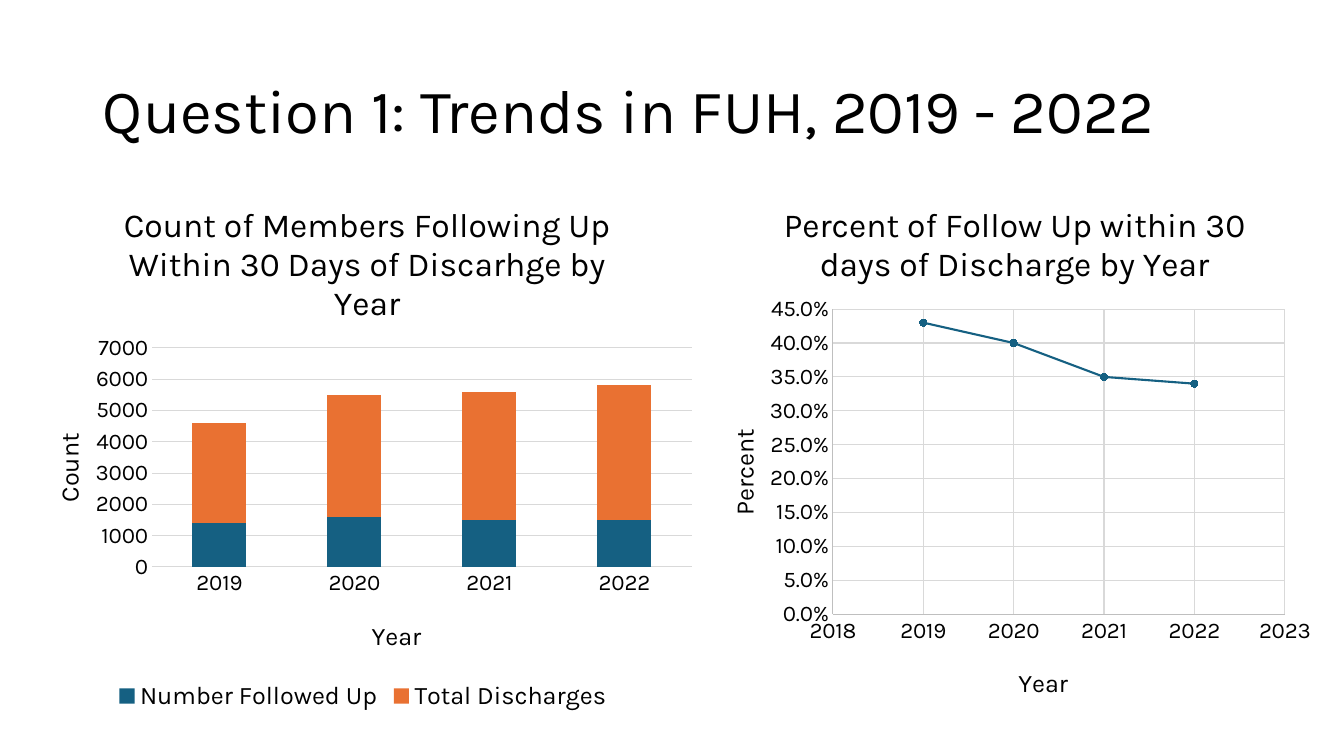
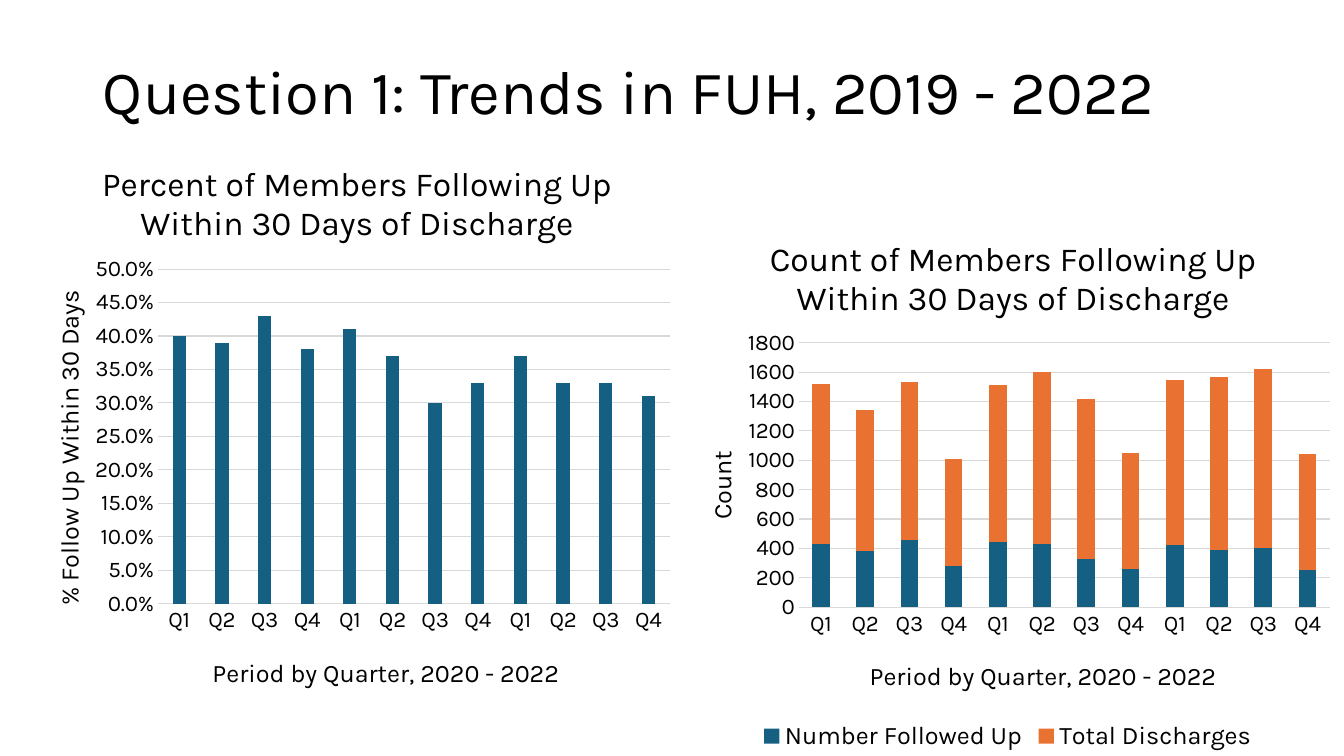
from lxml.etree import SubElement
from pptx import Presentation
from pptx.chart.data import CategoryChartData as CatData, XyChartData as XyData
from pptx.dml.color import RGBColor
from pptx.enum.chart import XL_CHART_TYPE as Kind, XL_LEGEND_POSITION as Spot
from pptx.enum.chart import XL_MARKER_STYLE as Mark, XL_TICK_MARK as Tick
from pptx.enum.text import MSO_ANCHOR as Anchor, PP_ALIGN as Align
from pptx.oxml.ns import qn
from pptx.util import Cm, Pt

rgb = RGBColor.from_string
BLACK, GRID, EDGE = "000000", "D9D9D9", "BFBFBF"
HUES = ["156082", "E97132"]
HEAD = "Question 1: Trends in FUH, 2019 - 2022"
NAMES = ["Number Followed Up", "Total Discharges"]
YEARS = ["2019", "2020", "2021", "2022"]
TERMS = ["Q1", "Q2", "Q3", "Q4"] * 3
SPAN = "Period by Quarter, 2020 - 2022"
FACE = {"name": "Karla", "bold": False}
TICKS = {"major_tick_mark": Tick.NONE, "minor_tick_mark": Tick.NONE}


def ink(font, size):
    for key, val in {**FACE, "size": Pt(size)}.items():
        setattr(font, key, val)
    font.color.rgb = rgb(BLACK)


def place(node, box, spot):
    old = node.find(qn("c:layout"))
    if old is not None:
        node.remove(old)
    lay = SubElement(node, qn("c:layout"))
    node.insert(0 if node.find(qn("c:tx")) is None else 1, lay)
    man = SubElement(lay, qn("c:manualLayout"))
    if len(spot) == 4:
        SubElement(man, qn("c:layoutTarget")).set("val", "inner")
    for key in "xy":
        SubElement(man, qn(f"c:{key}Mode")).set("val", "edge")
    left, top, wide, high = box
    parts = [(spot[0] - left) / wide, (spot[1] - top) / high]
    if len(spot) == 4:
        parts += [spot[2] / wide, spot[3] / high]
    for key, part in zip("xywh", parts):
        SubElement(man, qn(f"c:{key}")).set("val", f"{part:.4f}")


SLIDES = [
    (1.02, [
        {"kind": Kind.COLUMN_STACKED, "box": (0.51, 4.32, 17.27, 13.72),
         "plot": (3.83, 8.77, 13.61, 5.52),
         "title": ("Count of Members Following Up Within 30 Days of Discarhge by Year", 2.97),
         "x": ("Year", 9.25, 15.5), "y": ("Count", 1.21, 10.8),
         "cats": YEARS, "names": NAMES, "gap": 150, "lap": 100,
         "vals": [[1400, 1600, 1500, 1500], [3200, 3900, 4100, 4300]],
         "top": 7000, "step": 1000, "form": "General"},
        {"kind": Kind.XY_SCATTER_LINES, "box": (17.53, 4.32, 15.85, 13.72),
         "plot": (20.99, 7.79, 11.39, 7.69),
         "title": ("Percent of Follow Up within 30 days of Discharge by Year", 19.6),
         "x": ("Year", 25.55, 16.68), "y": ("Percent", 18.22, 10.7),
         "cats": YEARS, "names": ["Series 1"],
         "vals": [[0.43, 0.4, 0.35, 0.34]],
         "top": 0.45, "step": 0.05, "form": "0.0%"},
    ]),
    (0.53, [
        {"kind": Kind.COLUMN_CLUSTERED, "box": (0.48, 3.28, 16.74, 14.53),
         "plot": (3.98, 6.78, 12.9, 8.44),
         "title": ("Percent of Members Following Up Within 30 Days of Discharge", 2.42),
         "x": (SPAN, 5.24, 16.43), "y": ("% Follow Up Within 30 Days", 1.21, 7.2),
         "cats": TERMS, "names": ["Series 1"], "gap": 219, "lap": -27,
         "vals": [[0.4, 0.39, 0.43, 0.38, 0.41, 0.37, 0.3, 0.33, 0.37, 0.33, 0.33, 0.31]],
         "top": 0.5, "step": 0.05, "form": "0.0%"},
        {"kind": Kind.COLUMN_STACKED, "box": (16.93, 5.18, 16.93, 13.87),
         "plot": (20.13, 8.64, 13.38, 6.66),
         "title": ("Count of Members Following Up Within 30 Days of Discharge", 19.25),
         "x": (SPAN, 21.8, 16.5), "y": ("Count", 17.66, 11.24),
         "cats": TERMS, "names": NAMES, "gap": 150, "lap": 100,
         "vals": [[430, 380, 460, 280, 440, 430, 330, 260, 420, 390, 400, 250],
                  [1090, 960, 1070, 730, 1070, 1170, 1090, 790, 1130, 1180, 1220, 790]],
         "top": 1800, "step": 200, "form": "General"},
    ]),
]

deck = Presentation()
deck.slide_width, deck.slide_height = Cm(33.87), Cm(19.05)

for high, charts in SLIDES:
    slide = deck.slides.add_slide(deck.slide_layouts[5])
    head = slide.shapes.title
    spots = {"left": 2.34, "top": high, "width": 29.21, "height": 3.68}
    for key, val in spots.items():
        setattr(head, key, Cm(val))
    head.text_frame.text = HEAD
    head.text_frame.vertical_anchor = Anchor.MIDDLE
    para = head.text_frame.paragraphs[0]
    for key, val in {"alignment": Align.LEFT, "line_spacing": 0.9}.items():
        setattr(para, key, val)
    ink(para.runs[0].font, 44)

    for item in charts:
        xy = item["kind"] == Kind.XY_SCATTER_LINES
        box = item["box"]
        data = XyData() if xy else CatData()
        if not xy:
            data.categories = item["cats"]
        for name, vals in zip(item["names"], item["vals"]):
            if xy:
                row = data.add_series(name)
                for year, val in zip(item["cats"], vals):
                    row.add_data_point(int(year), val)
            else:
                data.add_series(name, vals)
        frame = slide.shapes.add_chart(item["kind"], *map(Cm, box), data)
        chart = frame.chart
        ink(chart.font, 10)
        plot = chart.plots[0]
        plot.vary_by_categories = False
        if not xy:
            plot.gap_width, plot.overlap = item["gap"], item["lap"]

        for line, hue in zip(plot.series, HUES):
            if xy:
                line.format.line.color.rgb = rgb(hue)
                line.format.line.width = Pt(1.5)
                mark = line.marker
                mark.style, mark.size = Mark.CIRCLE, 5
                fills = [mark.format.fill]
                mark.format.line.color.rgb = rgb(hue)
            else:
                fills = [line.format.fill]
            for fill in fills:
                fill.solid()
                fill.fore_color.rgb = rgb(hue)

        across, up = chart.category_axis, chart.value_axis
        grids = {"x": xy, "y": True}
        edges = {"x": EDGE if xy else GRID, "y": EDGE if xy else None}
        scale = {"minimum_scale": 0, "maximum_scale": item["top"],
                 "major_unit": item["step"]}
        for key, val in scale.items():
            setattr(up, key, val)
        if xy:
            years = {"minimum_scale": 2018, "maximum_scale": 2023, "major_unit": 1}
            for key, val in years.items():
                setattr(across, key, val)
        forms = {"x": "General", "y": item["form"]}

        for side, axis in {"x": across, "y": up}.items():
            looks = {**TICKS, "has_major_gridlines": grids[side], "has_title": True}
            for key, val in looks.items():
                setattr(axis, key, val)
            ink(axis.tick_labels.font, 16)
            axis.tick_labels.number_format = forms[side]
            axis.tick_labels.number_format_is_linked = False
            rules = [(axis.format.line, edges[side])]
            if grids[side]:
                rules.append((axis.major_gridlines.format.line, GRID))
            for rule, hue in rules:
                if hue:
                    rule.color.rgb = rgb(hue)
                    rule.width = Pt(0.75)
                else:
                    rule.fill.background()

        chart.has_title = True
        text, left = item["title"]
        labels = [
            (chart.chart_title, text, (left, box[1] + 0.65), 24, "0"),
            (across.axis_title, item["x"][0], item["x"][1:], 18, "0"),
            (up.axis_title, item["y"][0], item["y"][1:], 18, "-5400000"),
        ]
        for label, text, spot, size, turn in labels:
            body = label.text_frame
            body.text = text
            ink(body.paragraphs[0].runs[0].font, size)
            body._txBody.find(qn("a:bodyPr")).set("rot", turn)
            place(label._element, box, spot)
        place(chart._chartSpace.chart.plotArea, box, item["plot"])

        chart.has_legend = len(item["names"]) > 1
        if chart.has_legend:
            chart.legend.position = Spot.BOTTOM
            chart.legend.include_in_layout = False
            ink(chart.legend.font, 18)

deck.save("out.pptx")
